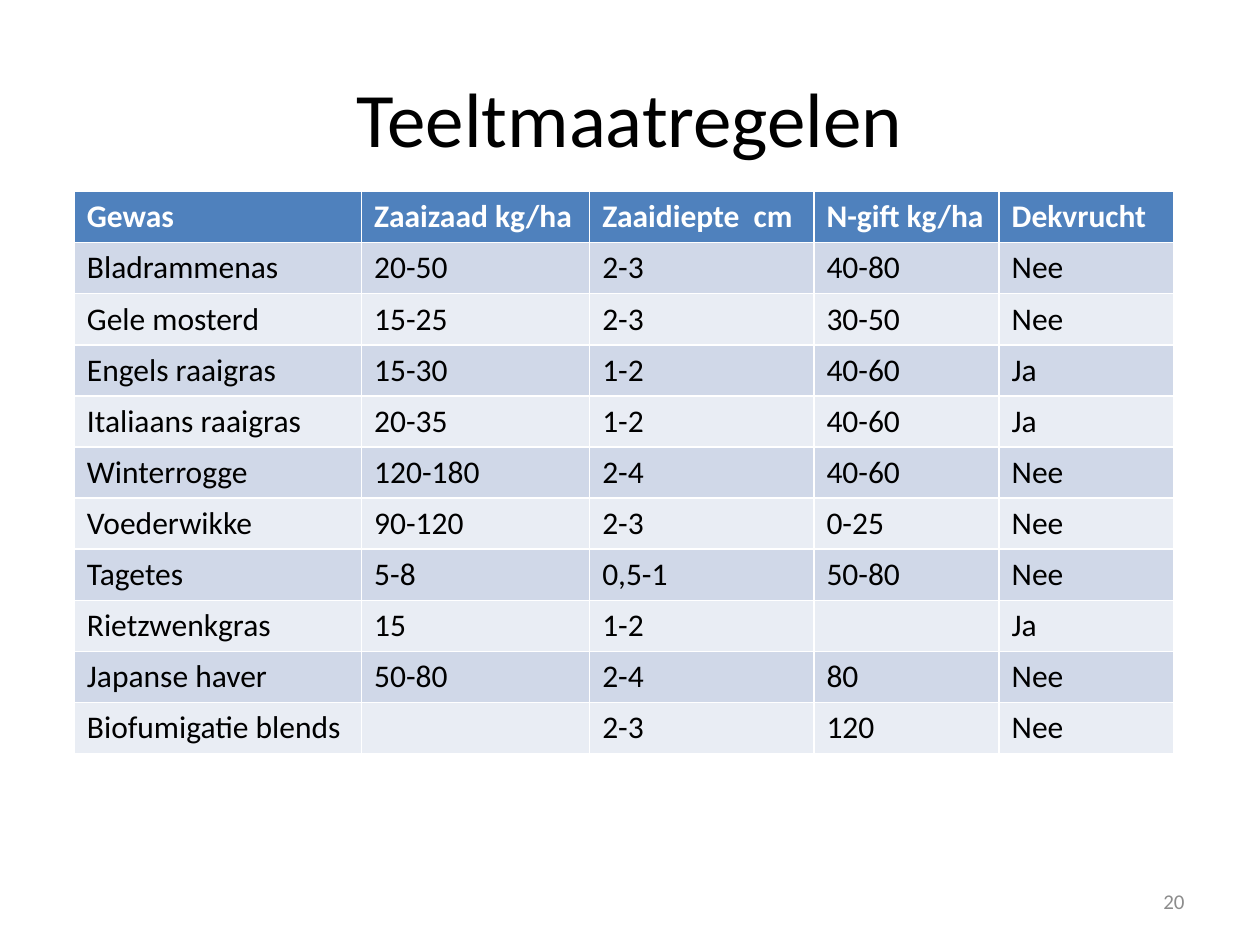
from pptx import Presentation
from pptx.dml.color import RGBColor
from pptx.enum.text import MSO_ANCHOR, PP_ALIGN
from pptx.util import Inches, Pt

TITLE = "Teeltmaatregelen"
PAGE_NUMBER = "20"
HEADINGS = ("Gewas", "Zaaizaad kg/ha", "Zaaidiepte  cm", "N-gift kg/ha", "Dekvrucht")
CROPS = [
    ("Bladrammenas", "20-50", "2-3", "40-80", "Nee"),
    ("Gele mosterd", "15-25", "2-3", "30-50", "Nee"),
    ("Engels raaigras", "15-30", "1-2", "40-60", "Ja"),
    ("Italiaans raaigras", "20-35", "1-2", "40-60", "Ja"),
    ("Winterrogge", "120-180", "2-4", "40-60", "Nee"),
    ("Voederwikke", "90-120", "2-3", "0-25", "Nee"),
    ("Tagetes", "5-8", "0,5-1", "50-80", "Nee"),
    ("Rietzwenkgras", "15", "1-2", "", "Ja"),
    ("Japanse haver", "50-80", "2-4", "80", "Nee"),
    ("Biofumigatie blends", "", "2-3", "120", "Nee"),
]
COLUMN_WIDTHS = (2.28, 1.81, 1.78, 1.47, 1.39)
TABLE_HEIGHT = 4.46
HEADING_FILL = "4F81BD"
BAND_FILLS = ("D0D8E8", "E9EDF4")


def color(value):
    return RGBColor.from_string(value)


def add_text(frame, text, size, ink, align=PP_ALIGN.LEFT, bold=False):
    paragraph = frame.paragraphs[0]
    paragraph.alignment = align
    run = paragraph.add_run()
    run.text = text
    run.font.name = "Calibri"
    run.font.size = Pt(size)
    run.font.bold = bold
    run.font.color.rgb = color(ink)


def add_title(slide):
    title = slide.shapes.title
    title.left, title.top = Inches(0.5), Inches(0.3)
    title.width, title.height = Inches(9), Inches(1.25)
    title.text_frame.vertical_anchor = MSO_ANCHOR.MIDDLE
    add_text(title.text_frame, TITLE, 44, "000000", PP_ALIGN.CENTER)


def add_crop_table(slide):
    rows = [HEADINGS, *CROPS]
    table = slide.shapes.add_table(
        len(rows), len(HEADINGS), Inches(0.59), Inches(1.52),
        Inches(sum(COLUMN_WIDTHS)), Inches(TABLE_HEIGHT),
    ).table
    for column, width in zip(table.columns, COLUMN_WIDTHS):
        column.width = Inches(width)
    for index, (row, values) in enumerate(zip(table.rows, rows)):
        heading = index == 0
        fill = HEADING_FILL if heading else BAND_FILLS[(index - 1) % 2]
        ink = "FFFFFF" if heading else "000000"
        for cell, value in zip(row.cells, values):
            cell.fill.solid()
            cell.fill.fore_color.rgb = color(fill)
            if value:
                add_text(cell.text_frame, value, 18, ink, bold=heading)


def add_page_number(slide):
    number = slide.shapes.add_textbox(Inches(7.17), Inches(6.95), Inches(2.33), Inches(0.4))
    number.text_frame.word_wrap = True
    number.text_frame.vertical_anchor = MSO_ANCHOR.MIDDLE
    add_text(number.text_frame, PAGE_NUMBER, 12, "8C8C8C", PP_ALIGN.RIGHT)


def main():
    deck = Presentation()
    deck.slide_width, deck.slide_height = Inches(10), Inches(7.5)
    slide = deck.slides.add_slide(deck.slide_layouts[5])
    add_title(slide)
    add_crop_table(slide)
    add_page_number(slide)
    deck.save("out.pptx")


if __name__ == "__main__":
    main()
